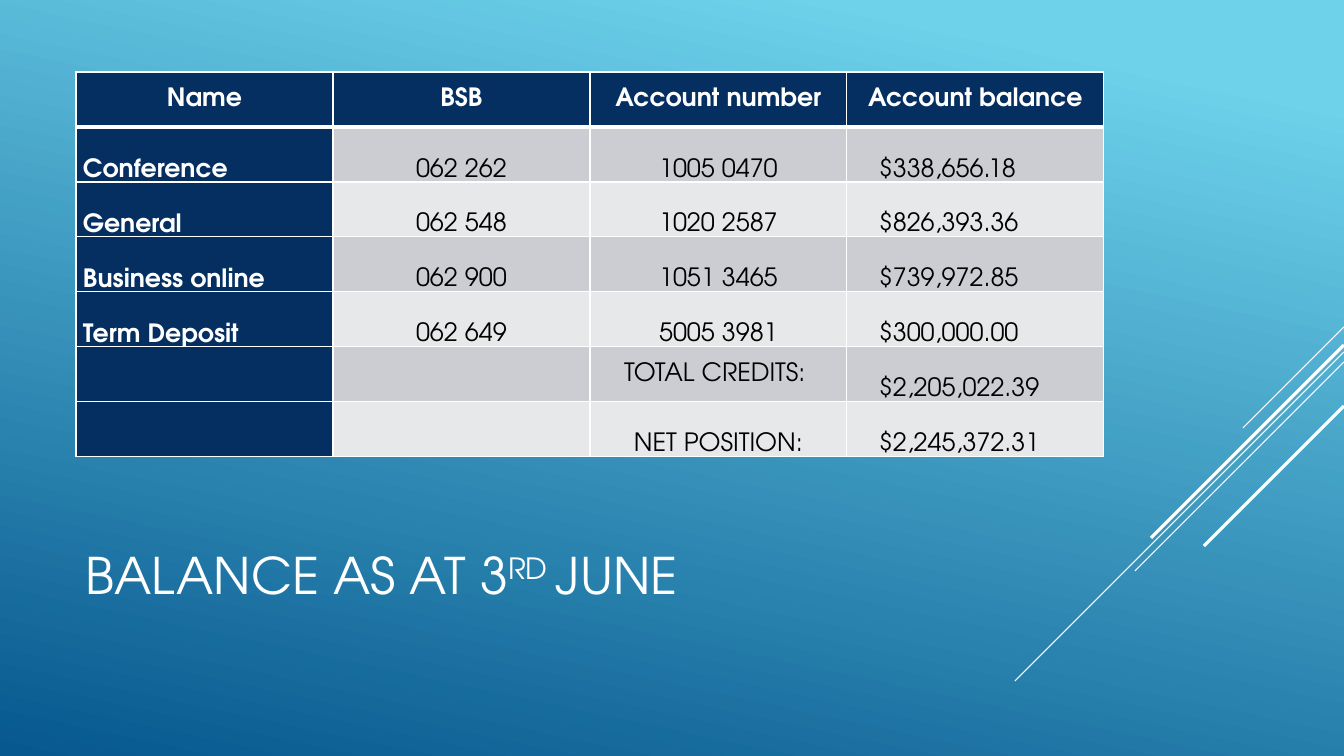
from lxml.etree import SubElement
from pptx import Presentation
from pptx.dml.color import RGBColor
from pptx.enum.shapes import MSO_CONNECTOR
from pptx.enum.text import MSO_ANCHOR, PP_ALIGN
from pptx.oxml import parse_xml
from pptx.oxml.ns import nsdecls, qn
from pptx.util import Pt

PX = 914400 / 100.8
FONT = "TeX Gyre Adventor"
WHITE, BLACK, NAVY = "FFFFFF", "000000", "052F61"
BANDS = ("CCCDD2", "E7E8EA")
COLUMN, ROW = 257, 55
BALANCE_TABS = ((25, "l"), (124, "dec"))

ACCOUNTS = [
    ("Name", "BSB", "Account number", "Account balance"),
    ("Conference", "062 262", "1005 0470", "\t$\t338,656.18"),
    ("General", "062 548", "1020 2587", "\t$\t826,393.36"),
    ("Business online", "062 900", "1051 3465", "\t$\t739,972.85"),
    ("Term Deposit", "062 649", "5005 3981", "\t$\t300,000.00"),
    ("", "", "TOTAL CREDITS: ", "\t$\t2,205,022.39"),
    ("", "", "NET POSITION:", "\t$\t2,245,372.31"),
]
TOTAL_ROW = 5

RAYS = [
    (1344, 327, 1243, 428, 0.75),
    (1344, 352, 1015, 681, 0.75),
    (1344, 362, 1135, 571, 0.75),
    (1344, 345, 1151, 538, 2.25),
    (1344, 406, 1204, 546, 2.25),
]


def px(n):
    return round(n * PX)


def rgb(value):
    return RGBColor.from_string(value)


def apply(target, values):
    for name, value in values.items():
        setattr(target, name, value)


def add_run(p, text, size, color, bold=False, baseline=0):
    r = p.add_run()
    r.text = text
    apply(r.font, {"name": FONT, "size": Pt(size), "bold": bold})
    r.font.color.rgb = rgb(color)
    if baseline:
        r.font._element.set("baseline", str(baseline * 1000))


def add_background(s):
    fill = s.background.fill
    fill.gradient()
    fill.gradient_angle = 258
    for stop, position, color in zip(fill.gradient_stops, (0.1, 1), ("6ED2EB", "06588E")):
        stop.position = position
        stop.color.rgb = rgb(color)


def add_ray(s, x1, y1, x2, y2, width):
    ray = s.shapes.add_connector(MSO_CONNECTOR.STRAIGHT, *map(px, (x1, y1, x2, y2)))
    ray.line.width = Pt(width)
    ray.line.color.rgb = rgb(WHITE)
    SubElement(ray._element.spPr, qn("a:effectLst"))


def add_title(s):
    sp = s.shapes.add_textbox(*map(px, (76, 495, 940, 166)))
    tf = sp.text_frame
    apply(tf, {"word_wrap": True, "vertical_anchor": MSO_ANCHOR.MIDDLE})
    p = tf.paragraphs[0]
    p.line_spacing = 0.9
    for text, baseline in (("BALANCE AS AT 3", 0), ("RD ", 30), ("JUNE", 0)):
        add_run(p, text, 36, WHITE, baseline=baseline)


def add_borders(cell, widths):
    tc_pr = cell._tc.get_or_add_tcPr()
    for i, (side, width) in enumerate(widths.items()):
        tc_pr.insert(i, parse_xml(
            f'<a:ln{side} {nsdecls("a")} w="{Pt(width)}"><a:solidFill>'
            f'<a:srgbClr val="{WHITE}"/></a:solidFill></a:ln{side}>'))


def add_tabs(p):
    tabs = SubElement(p._p.get_or_add_pPr(), qn("a:tabLst"))
    for position, align in BALANCE_TABS:
        SubElement(tabs, qn("a:tab"), pos=str(px(position)), algn=align)


def fill_cell(cell, row, col, text):
    header = row == 0
    strong = header or col == 0
    cell.fill.solid()
    cell.fill.fore_color.rgb = rgb(NAVY if strong else BANDS[(row - 1) % 2])
    add_borders(cell, {"L": 1, "R": 1, "T": 3 if row == 1 else 1, "B": 3 if header else 1})
    if not text:
        return
    middle = header or (row, col) == (TOTAL_ROW, 2)
    apply(cell, {
        "margin_left": px(7), "margin_right": px(7), "margin_top": 0, "margin_bottom": 0,
        "vertical_anchor": MSO_ANCHOR.MIDDLE if middle else MSO_ANCHOR.BOTTOM,
    })
    p = cell.text_frame.paragraphs[0]
    p.alignment = PP_ALIGN.CENTER if header or col in (1, 2) else PP_ALIGN.LEFT
    if "\t" in text:
        add_tabs(p)
    add_run(p, text, 18, WHITE if strong else BLACK, bold=strong)


def add_accounts(s):
    rows, cols = len(ACCOUNTS), len(ACCOUNTS[0])
    frame = s.shapes.add_table(rows, cols, *map(px, (76, 72, cols * COLUMN, rows * ROW)))
    for row, texts in enumerate(ACCOUNTS):
        for col, text in enumerate(texts):
            fill_cell(frame.table.cell(row, col), row, col, text)


def main():
    prs = Presentation()
    apply(prs, {"slide_width": px(1344), "slide_height": px(756)})
    s = prs.slides.add_slide(prs.slide_layouts[6])
    add_background(s)
    for ray in RAYS:
        add_ray(s, *ray)
    add_title(s)
    add_accounts(s)
    prs.save("out.pptx")


if __name__ == "__main__":
    main()
